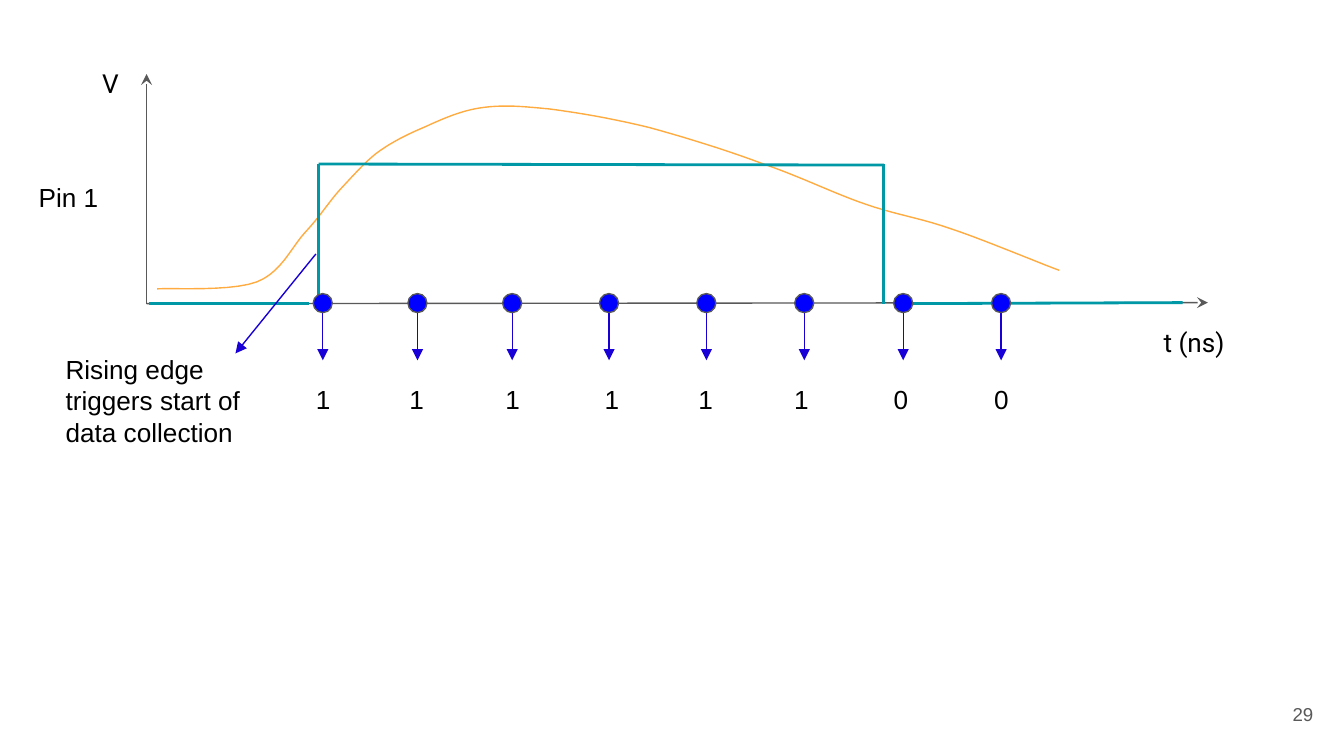
from dataclasses import dataclass

from pptx import Presentation
from pptx.dml.color import RGBColor
from pptx.enum.shapes import MSO_CONNECTOR as Link, MSO_SHAPE as Preset
from pptx.enum.text import MSO_ANCHOR as Anchor, PP_ALIGN as Align
from pptx.oxml.ns import qn
from pptx.util import Cm, Pt
from lxml.etree import SubElement

BLACK = RGBColor(0x00, 0x00, 0x00)
GREY = RGBColor(0x59, 0x59, 0x59)
ORANGE = RGBColor(0xFF, 0xAB, 0x40)
TEAL = RGBColor(0x00, 0x97, 0xA7)
INDIGO = RGBColor(0x18, 0x00, 0xD7)
BLUE = RGBColor(0x00, 0x00, 0xFF)

THIN = 0.75
BASELINE = 5.73
DOT = 0.36
STEPS = 10

Point = tuple[float, float]


@dataclass
class Stroke:
    start: Point
    end: Point
    color: RGBColor
    weight: float = THIN
    arrow: str = ""


@dataclass
class Label:
    text: str
    left: float
    top: float
    width: float
    height: float
    font: str = "Arial"
    size: int = 14
    color: RGBColor = BLACK
    align: Align = Align.LEFT
    anchor: Anchor = Anchor.TOP


@dataclass
class Sample:
    x: float
    bit_left: float
    bit: str


AXES = [
    Stroke((2.77, 5.74), (2.77, 1.4), GREY, arrow="stealth"),
    Stroke((2.77, 5.74), (22.83, 5.72), GREY, arrow="stealth"),
]
AXIS_LABELS = [
    Label("t (ns)", 21.74, 5.92, 2.24, 0.51, font="Roboto"),
    Label("V", 1.68, 1.02, 2.24, 0.51, font="Roboto"),
]
PULSE = [
    Stroke(start, end, TEAL, 1.5)
    for start, end in (
        ((2.82, 5.74), (5.84, 5.74)),
        ((6.02, 5.74), (6.02, 3.1)),
        ((6.02, 3.1), (16.71, 3.12)),
        ((16.69, 3.1), (16.69, 5.74)),
        ((16.89, 5.74), (22.35, 5.72)),
    )
]
TRIGGER = Stroke((5.97, 4.8), (4.45, 6.68), INDIGO, arrow="triangle")
TRIGGER_NOTE = Label(
    "Rising edge triggers start of data collection", 0.99, 6.43, 3.84, 2.01
)
PIN = Label("Pin 1", 0.48, 3.18, 1.8, 1.09)
PAGE = Label("29", 23.55, 12.95, 1.52, 1.09, size=10, color=GREY,
             align=Align.RIGHT, anchor=Anchor.MIDDLE)

SAMPLES = [
    Sample(6.1, 5.72, "1"),
    Sample(7.89, 7.49, "1"),
    Sample(9.68, 9.3, "1"),
    Sample(11.51, 11.18, "1"),
    Sample(13.35, 12.95, "1"),
    Sample(15.2, 14.76, "1"),
    Sample(17.07, 16.64, "0"),
    Sample(18.92, 18.54, "0"),
]

VOLTAGE_START = (2.97, 5.46)
VOLTAGE_CURVES = [
    ((3.3, 5.44), (4.37, 5.51), (4.85, 5.33)),
    ((5.31, 5.16), (5.51, 4.67), (5.77, 4.39)),
    ((6.05, 4.09), (6.2, 3.84), (6.43, 3.58)),
    ((6.65, 3.35), (6.86, 3.1), (7.11, 2.9)),
    ((7.39, 2.69), (7.7, 2.54), (8.05, 2.39)),
    ((8.38, 2.24), (8.74, 2.08), (9.14, 2.03)),
    ((9.53, 1.98), (9.88, 2.01), (10.39, 2.06)),
    ((10.92, 2.13), (11.58, 2.24), (12.27, 2.41)),
    ((12.93, 2.59), (13.74, 2.84), (14.43, 3.1)),
    ((15.11, 3.33), (15.77, 3.66), (16.36, 3.86)),
    ((16.94, 4.06), (17.35, 4.11), (17.96, 4.32)),
    ((18.57, 4.52), (19.66, 4.98), (20.02, 5.11)),
]


def draw_stroke(shapes, stroke: Stroke) -> None:
    connector = shapes.add_connector(
        Link.STRAIGHT, *(Cm(v) for v in stroke.start + stroke.end)
    )
    connector.line.color.rgb = stroke.color
    connector.line.width = Pt(stroke.weight)
    properties = connector._element.spPr
    if stroke.arrow:
        SubElement(properties.find(qn("a:ln")), qn("a:tailEnd"), type=stroke.arrow)
    SubElement(properties, qn("a:effectLst"))


def draw_label(shapes, label: Label) -> None:
    box = shapes.add_textbox(
        Cm(label.left), Cm(label.top), Cm(label.width), Cm(label.height)
    )
    frame = box.text_frame
    frame.word_wrap = True
    frame.vertical_anchor = label.anchor
    frame.margin_left = frame.margin_right = Cm(0.25)
    frame.margin_top = frame.margin_bottom = Cm(0.25)
    paragraph = frame.paragraphs[0]
    paragraph.alignment = label.align
    run = paragraph.add_run()
    run.text = label.text
    run.font.name = label.font
    run.font.size = Pt(label.size)
    run.font.color.rgb = label.color


def bezier(points: list[Point], t: float) -> Point:
    while len(points) > 1:
        points = [
            (a[0] + (b[0] - a[0]) * t, a[1] + (b[1] - a[1]) * t)
            for a, b in zip(points, points[1:])
        ]
    return points[0]


def draw_voltage(shapes) -> None:
    outline = [VOLTAGE_START]
    for curve in VOLTAGE_CURVES:
        controls = [outline[-1], *curve]
        outline += [bezier(controls, step / STEPS) for step in range(1, STEPS + 1)]
    vertices = [(Cm(x), Cm(y)) for x, y in outline]
    builder = shapes.build_freeform(*vertices[0])
    builder.add_line_segments(vertices[1:], close=False)
    voltage = builder.convert_to_shape()
    voltage.shadow.inherit = False
    voltage.fill.background()
    voltage.line.color.rgb = ORANGE
    voltage.line.width = Pt(THIN)


def draw_dot(shapes, sample: Sample) -> None:
    dot = shapes.add_shape(
        Preset.OVAL, Cm(sample.x - DOT / 2), Cm(BASELINE - DOT / 2), Cm(DOT), Cm(DOT)
    )
    dot.shadow.inherit = False
    dot.fill.solid()
    dot.fill.fore_color.rgb = BLUE
    dot.line.color.rgb = GREY
    dot.line.width = Pt(THIN)


def draw_reading(shapes, sample: Sample) -> None:
    draw_stroke(
        shapes, Stroke((sample.x, 5.92), (sample.x, 6.81), INDIGO, arrow="triangle")
    )
    draw_label(shapes, Label(sample.bit, sample.bit_left, 6.99, 0.79, 1.3))


def main() -> None:
    deck = Presentation()
    deck.slide_width, deck.slide_height = Cm(25.4), Cm(14.29)
    shapes = deck.slides.add_slide(deck.slide_layouts[6]).shapes
    draw_label(shapes, PAGE)
    for axis in AXES:
        draw_stroke(shapes, axis)
    for axis_label in AXIS_LABELS:
        draw_label(shapes, axis_label)
    draw_voltage(shapes)
    for edge in PULSE:
        draw_stroke(shapes, edge)
    draw_stroke(shapes, TRIGGER)
    draw_label(shapes, TRIGGER_NOTE)
    for sample in SAMPLES:
        draw_dot(shapes, sample)
    for sample in SAMPLES:
        draw_reading(shapes, sample)
    draw_label(shapes, PIN)
    deck.save("out.pptx")


if __name__ == "__main__":
    main()
